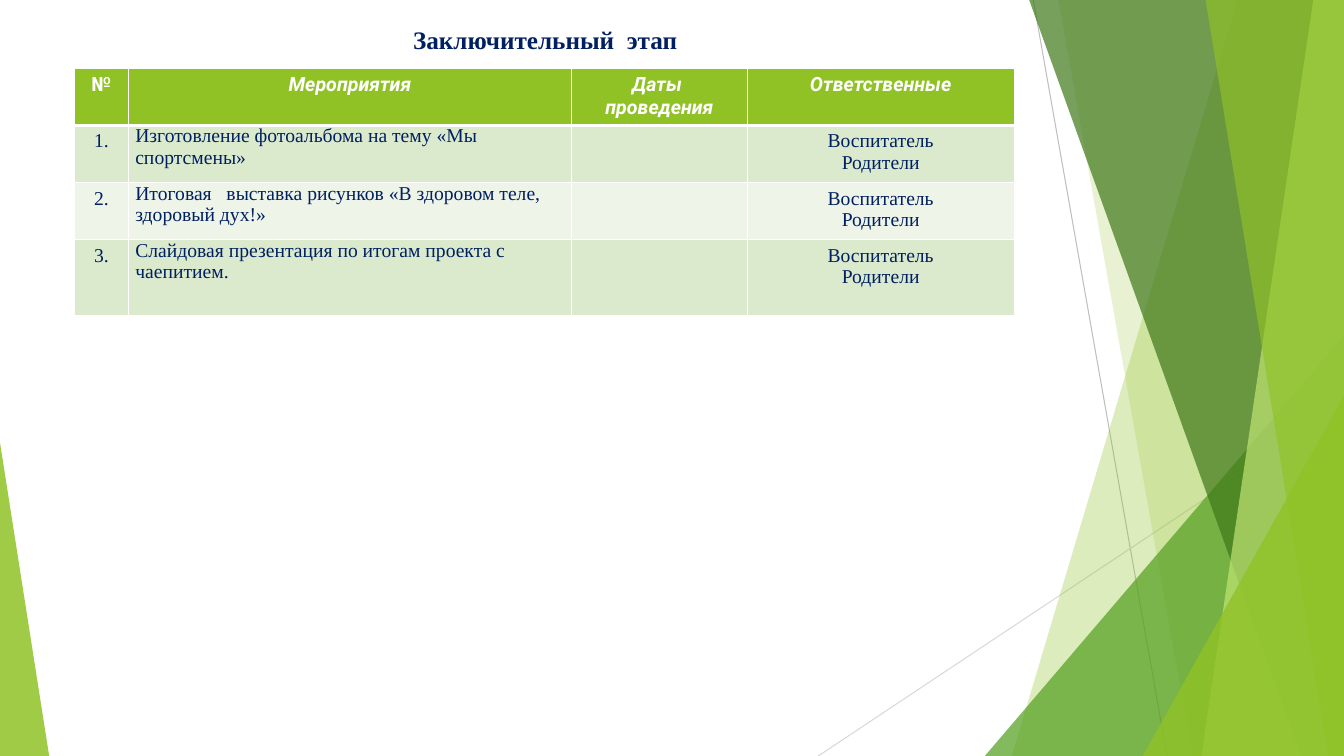
from dataclasses import dataclass

from lxml import etree
from pptx import Presentation
from pptx.dml.color import RGBColor
from pptx.enum import shapes, text
from pptx.oxml import ns
from pptx.util import Cm, Pt


@dataclass(frozen=True)
class Theme:
    lime: str = "90C226"
    green: str = "54A021"
    forest: str = "3F7819"
    pale: str = "C0E474"
    navy: str = "002060"
    white: str = "FFFFFF"
    bands: tuple = ("DBE9CD", "EEF4E8")
    guides: tuple = ("BFBFBF", "D9D9D9")
    heading_font: str = "Roboto"
    body_font: str = "Times New Roman"
    title_size: int = 18
    table_size: int = 14


theme = Theme()


def paint(shape, color, opacity):
    shape.shadow.inherit = False
    shape.line.fill.background()
    shape.fill.solid()
    shape.fill.fore_color.rgb = RGBColor.from_string(color)
    tint = shape.fill._xPr.find(".//" + ns.qn("a:srgbClr"))
    etree.SubElement(tint, ns.qn("a:alpha"), val=str(opacity * 1000))


def write(frame, lines, align, font, size, color, bold=False, italic=False):
    for index, line in enumerate(lines):
        paragraph = frame.add_paragraph() if index else frame.paragraphs[0]
        paragraph.alignment = align
        run = paragraph.add_run()
        run.text = line
        run.font.name = font
        run.font.size = Pt(size)
        run.font.bold = bold
        run.font.italic = italic
        run.font.color.rgb = RGBColor.from_string(color)


deck = Presentation()
deck.slide_width, deck.slide_height = Cm(33.87), Cm(19.05)
slide = deck.slides.add_slide(deck.slide_layouts[6])
right, bottom = 33.87, 19.05
center, left = text.PP_ALIGN.CENTER, text.PP_ALIGN.LEFT

guide_lines = [(26.04, 0, 29.41, bottom), (right, 10.24, 20.62, bottom)]
for ends, color in zip(guide_lines, theme.guides):
    guide = slide.shapes.add_connector(
        shapes.MSO_CONNECTOR.STRAIGHT, *[Cm(value) for value in ends])
    guide.line.color.rgb = RGBColor.from_string(color)
    guide.line.width = Pt(0.75)
    etree.SubElement(guide._element.spPr, ns.qn("a:effectLst"))

facets = [
    ("band", 31.19, 25.5, theme.lime, 30),
    ("band", 26.67, 30.05, theme.lime, 20),
    ("corner", 24.82, 8.46, theme.green, 72),
    ("band", 25.93, 32.79, theme.forest, 70),
    ("band", 33.1, 30.28, theme.pale, 70),
    ("band", 30.38, 33.48, theme.lime, 65),
    ("corner", 28.8, 9.98, theme.lime, 80),
    ("left corner", 0, 11.15, theme.lime, 85),
]
for kind, first, second, color, opacity in facets:
    if kind == "band":
        outline = slide.shapes.build_freeform(Cm(first), Cm(-0.02))
        outline.add_line_segments([
            (Cm(right), Cm(-0.02)), (Cm(right), Cm(bottom)), (Cm(second), Cm(bottom))])
        facet = outline.convert_to_shape()
    else:
        width = right - first if kind == "corner" else 1.24
        facet = slide.shapes.add_shape(
            shapes.MSO_SHAPE.ISOSCELES_TRIANGLE,
            Cm(first), Cm(second), Cm(width), Cm(bottom - second))
        facet.adjustments[0] = 1 if kind == "corner" else 0
    paint(facet, color, opacity)

heading = slide.shapes.add_textbox(Cm(1.88), Cm(0.5), Cm(23.88), Cm(1.2))
heading.text_frame.word_wrap = True
write(heading.text_frame, ["Заключительный  этап "], center,
      theme.body_font, theme.title_size, theme.navy, bold=True)

people = ["Воспитатель", "Родители"]
activities = [
    "Изготовление фотоальбома на тему «Мы спортсмены»",
    "Итоговая   выставка рисунков «В здоровом теле, здоровый дух!»",
    "Слайдовая презентация по итогам проекта с чаепитием.",
]
plan = [[["№"], ["Мероприятия"], ["Даты ", "проведения"], ["Ответственные"]]]
for number, activity in enumerate(activities, 1):
    plan.append([[f"{number}."], [activity], [], people])

column_widths = [1.35, 11.18, 4.42, 6.73]
row_heights = [1.36, 1.36, 1.36, 1.9]
schedule = slide.shapes.add_table(
    len(plan), len(column_widths), Cm(1.88), Cm(1.72),
    Cm(sum(column_widths)), Cm(sum(row_heights))).table
schedule.first_row = schedule.horz_banding = False
for column, width in zip(schedule.columns, column_widths):
    column.width = Cm(width)

for r, entries in enumerate(plan):
    schedule.rows[r].height = Cm(row_heights[r])
    for c, lines in enumerate(entries):
        cell = schedule.cell(r, c)
        header = r == 0
        activity_cell = c == 1 and not header
        if activity_cell:
            cell.margin_left = cell.margin_right = Cm(0.18)
            cell.margin_top = cell.margin_bottom = 0
        properties = cell._tc.get_or_add_tcPr()
        thick_side = {0: "B", 1: "T"}.get(r)
        for side in "LRTB":
            weight = 3 if side == thick_side else 1
            border = etree.SubElement(
                properties, ns.qn(f"a:ln{side}"), w=str(Pt(weight)))
            fill = etree.SubElement(border, ns.qn("a:solidFill"))
            etree.SubElement(fill, ns.qn("a:srgbClr"), val=theme.white)
        cell.fill.solid()
        cell.fill.fore_color.rgb = RGBColor.from_string(
            theme.lime if header else theme.bands[(r - 1) % 2])
        write(cell.text_frame, lines, left if activity_cell else center,
              theme.heading_font if header else theme.body_font, theme.table_size,
              theme.white if header else theme.navy,
              bold=header, italic=header and c > 0)

deck.save("out.pptx")
